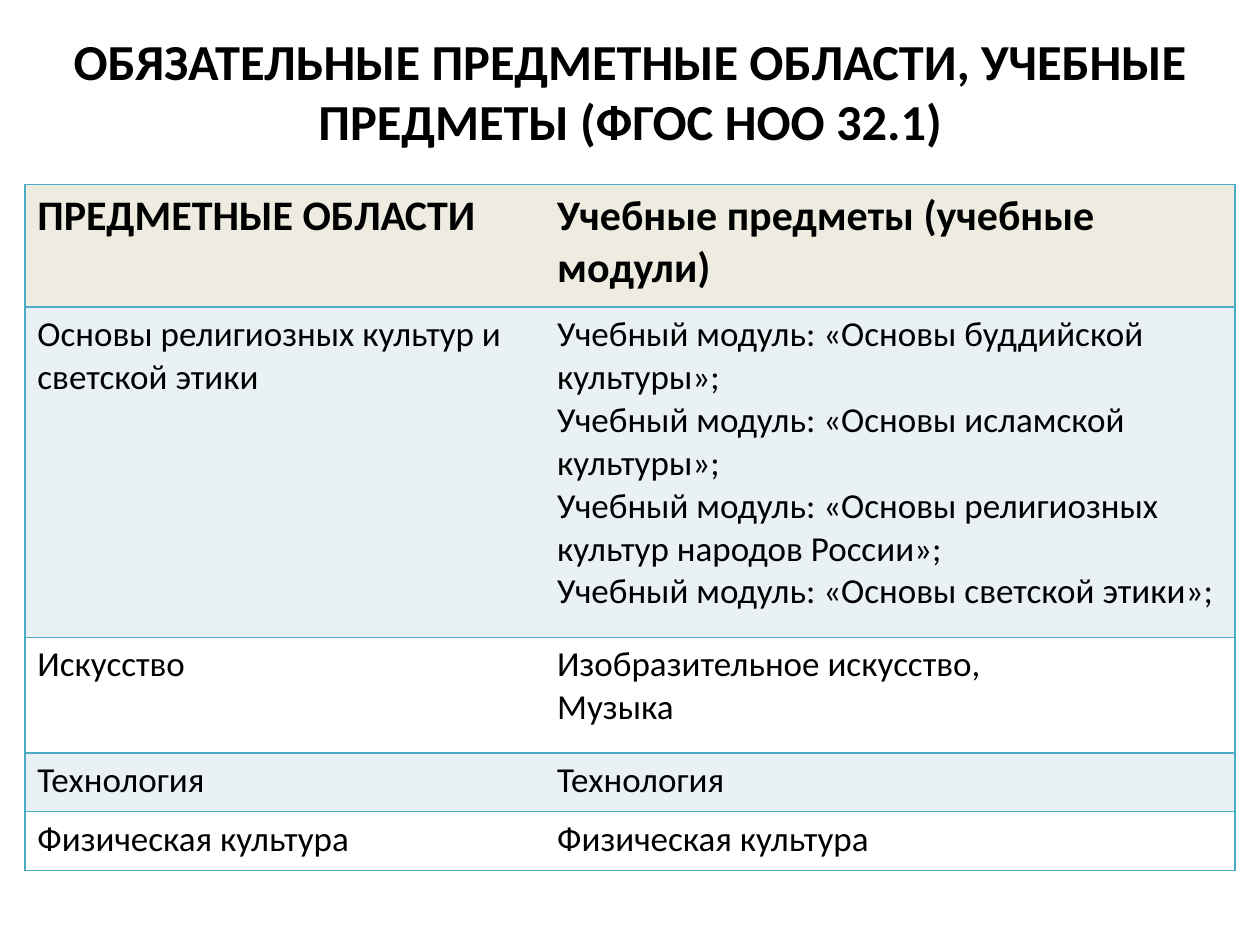
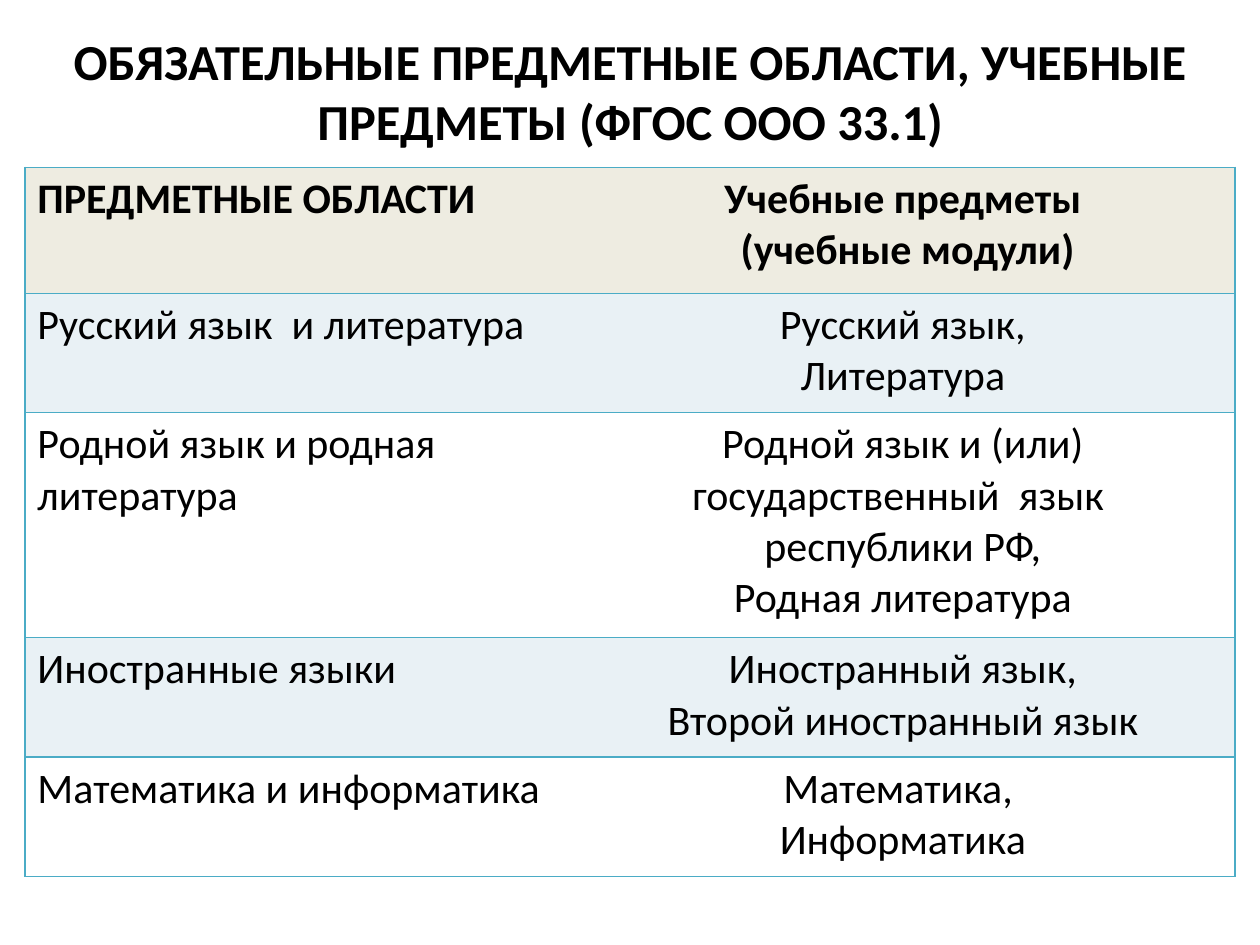
import pptx
import pptx.util
import pptx.dml.color
import pptx.enum.text
import pptx.oxml.ns
from lxml import etree

Pt = pptx.util.Pt
ALIGN = pptx.enum.text.PP_ALIGN
COLORS = {"text": "000000", "border": "4BACC6", "header": "EEECE1",
          "band": "E9F1F5", "plain": "FFFFFF"}
FONT = "Calibri"
MARGIN = 14.2
TITLE_TOP, TITLE_WIDTH, TITLE_HEIGHT, TITLE_SIZE = 15, 692, 73.5, 28.8
HEADER_SIZE = 24
TITLE = "ОБЯЗАТЕЛЬНЫЕ ПРЕДМЕТНЫЕ ОБЛАСТИ, УЧЕБНЫЕ ПРЕДМЕТЫ ({})"
AREAS = "ПРЕДМЕТНЫЕ ОБЛАСТИ"

# Each row: height, subject area, lines of the subjects cell
STANDARDS = [
    {"standard": "ФГОС НОО 32.1", "top": 105.5, "columns": (297, 394.5),
     "size": 20, "align": ALIGN.LEFT,
     "rows": [
         (70, AREAS, ["Учебные предметы (учебные модули)"]),
         (188.7, "Основы религиозных культур и светской этики", [
             "Учебный модуль: «Основы буддийской культуры»;",
             "Учебный модуль: «Основы исламской культуры»;",
             "Учебный модуль: «Основы религиозных культур народов России»;",
             "Учебный модуль: «Основы светской этики»;"]),
         (66, "Искусство", ["Изобразительное искусство,", "Музыка"]),
         (33.6, "Технология", ["Технология"]),
         (33.6, "Физическая культура", ["Физическая культура"]),
     ]},
    {"standard": "ФГОС ООО 33.1", "top": 95.6, "columns": (312, 379.5),
     "size": 24, "align": ALIGN.CENTER,
     "rows": [
         (72, AREAS, ["Учебные предметы", " (учебные модули)"]),
         (68.2, "Русский язык  и литература", ["Русский язык,", "Литература"]),
         (128.6, "Родной язык и родная литература", [
             "Родной язык и (или) государственный  язык  республики РФ,",
             "Родная литература"]),
         (68.2, "Иностранные языки", ["Иностранный язык,", "Второй иностранный язык"]),
         (68.2, "Математика и информатика", ["Математика, ", "Информатика"]),
     ]},
]


def rgb(name):
    return pptx.dml.color.RGBColor.from_string(COLORS[name])


def add_run(paragraph, text, size, bold, align):
    paragraph.alignment = align
    run = paragraph.add_run()
    run.text = text
    run.font.name = FONT
    run.font.size = Pt(size)
    run.font.bold = bold
    run.font.color.rgb = rgb("text")


def set_borders(cell, visible_sides):
    """Draw the visible sides (letters of LRTB) and blank the others."""
    qn = pptx.oxml.ns.qn
    properties = cell._tc.get_or_add_tcPr()
    for side in "LRTB":
        line = etree.SubElement(properties, qn("a:ln" + side), w=str(Pt(1)))
        if side in visible_sides:
            fill = etree.SubElement(line, qn("a:solidFill"))
            etree.SubElement(fill, qn("a:srgbClr"), val=COLORS["border"])
        else:
            etree.SubElement(line, qn("a:noFill"))


def fill_cell(cell, lines, size, bold, align, color, sides):
    set_borders(cell, sides)
    cell.fill.solid()
    cell.fill.fore_color.rgb = rgb(color)
    frame = cell.text_frame
    for number, line in enumerate(lines):
        paragraph = frame.add_paragraph() if number else frame.paragraphs[0]
        add_run(paragraph, line, size, bold, align)


def add_title(slide, text):
    title = slide.shapes.title
    title.left, title.top = Pt(MARGIN), Pt(TITLE_TOP)
    title.width, title.height = Pt(TITLE_WIDTH), Pt(TITLE_HEIGHT)
    frame = title.text_frame
    frame.word_wrap = True
    frame.auto_size = pptx.enum.text.MSO_AUTO_SIZE.NONE
    frame.vertical_anchor = pptx.enum.text.MSO_ANCHOR.MIDDLE
    add_run(frame.paragraphs[0], text, TITLE_SIZE, True, ALIGN.CENTER)


def add_subjects_table(slide, content):
    rows, columns = content["rows"], content["columns"]
    table = slide.shapes.add_table(
        len(rows), len(columns), Pt(MARGIN), Pt(content["top"]),
        Pt(sum(columns)), Pt(sum(row[0] for row in rows))).table
    table.first_row = table.horz_banding = False
    for column, width in zip(table.columns, columns):
        column.width = Pt(width)
    for index, (height, area, subjects) in enumerate(rows):
        table.rows[index].height = Pt(height)
        header = index == 0
        size = HEADER_SIZE if header else content["size"]
        color = "header" if header else ("plain", "band")[index % 2]
        fill_cell(table.cell(index, 0), [area], size, header, ALIGN.LEFT, color, "LTB")
        fill_cell(table.cell(index, 1), subjects, size, header, content["align"], color, "RTB")


def main():
    deck = pptx.Presentation()
    deck.slide_width, deck.slide_height = Pt(720), Pt(540)
    title_only = deck.slide_layouts[5]
    for content in STANDARDS:
        slide = deck.slides.add_slide(title_only)
        add_title(slide, TITLE.format(content["standard"]))
        add_subjects_table(slide, content)
    deck.save("out.pptx")


if __name__ == "__main__":
    main()
